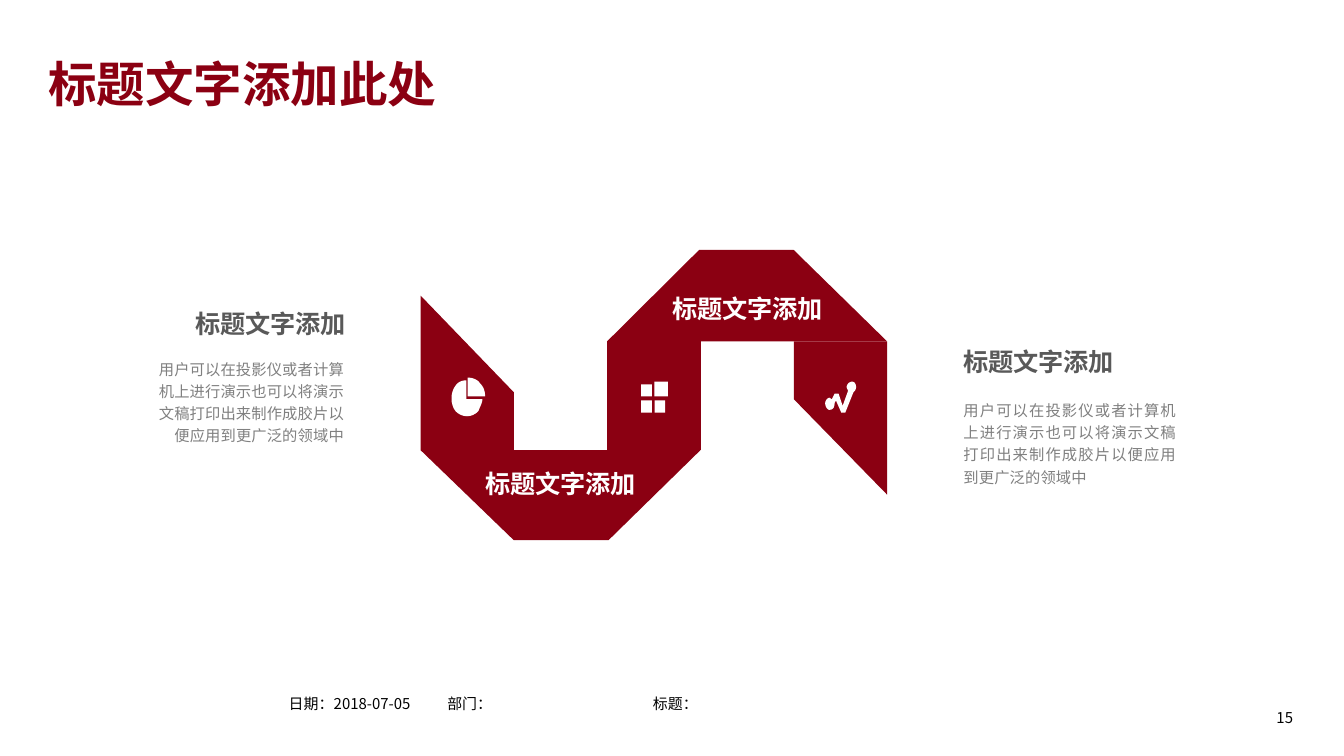
import dataclasses

import lxml.etree
import pptx
import pptx.dml.color
import pptx.enum.shapes
import pptx.enum.text
import pptx.oxml.ns
import pptx.util

Inches = pptx.util.Inches
ALIGN = pptx.enum.text.PP_ALIGN


@dataclasses.dataclass(frozen=True)
class Theme:
    font: str = "Noto Sans CJK SC"
    red: str = "8B0012"
    white: str = "FFFFFF"
    black: str = "000000"
    heading: str = "595959"
    body: str = "808080"
    title_size: float = 26
    heading_size: float = 13.5
    body_size: float = 8.25
    footer_size: float = 8


THEME = Theme()
LABEL = "标题文字添加"
BODY = "用户可以在投影仪或者计算机上进行演示也可以将演示文稿打印出来制作成胶片以便应用到更广泛的领域中"


def add_text(page, text, box, *, size, color, bold=False, align=ALIGN.LEFT, spacing=1.0):
    frame = page.shapes.add_textbox(*map(Inches, box)).text_frame
    frame.word_wrap = True
    para = frame.paragraphs[0]
    para.alignment = align
    para.line_spacing = spacing
    span = para.add_run()
    span.text = text
    span.font.name = THEME.font
    span.font.size = pptx.util.Pt(size)
    span.font.bold = bold
    span.font.color.rgb = pptx.dml.color.RGBColor.from_string(color)
    east_asian = lxml.etree.SubElement(span.font._element, pptx.oxml.ns.qn("a:ea"))
    east_asian.set("typeface", THEME.font)


def paint(shape, color):
    shape.shadow.inherit = False
    shape.fill.solid()
    shape.fill.fore_color.rgb = pptx.dml.color.RGBColor.from_string(color)
    shape.line.fill.background()


def curve_points(start, curve, steps=8):
    """Sample a cubic curve given as two control points and an end point."""
    x0, y0 = start
    x1, y1, x2, y2, x3, y3 = curve
    for step in range(1, steps + 1):
        t = step / steps
        u = 1 - t
        a, b, c, d = u**3, 3 * u * u * t, 3 * u * t * t, t**3
        yield a * x0 + b * x1 + c * x2 + d * x3, a * y0 + b * y1 + c * y2 + d * y3


def add_outline(page, origin, segments, color):
    """Draw a closed outline; a pair is a corner, six numbers are a curve."""
    points = []
    for segment in segments:
        points.extend([segment] if len(segment) == 2 else curve_points(points[-1], segment))
    left, top = origin
    corners = [(Inches(left + x), Inches(top + y)) for x, y in points]
    builder = page.shapes.build_freeform(*corners[0], scale=1.0)
    builder.add_line_segments(corners[1:], close=True)
    paint(builder.convert_to_shape(), color)


def add_pie_icon(page, origin):
    body = [(0.12, 0.02), (0.09, 0.02, 0.06, 0.03, 0.04, 0.06),
            (0, 0.11, 0, 0.2, 0.04, 0.25), (0.09, 0.3, 0.16, 0.3, 0.21, 0.25),
            (0.22, 0.22, 0.24, 0.19, 0.24, 0.16), (0.12, 0.16)]
    slice_ = [(0.22, 0.04), (0.2, 0.01, 0.16, 0, 0.13, 0), (0.13, 0.14),
              (0.26, 0.14), (0.26, 0.1, 0.25, 0.07, 0.22, 0.04)]
    for segments in (body, slice_):
        add_outline(page, origin, segments, THEME.white)


def add_tiles_icon(page, origin):
    left, top = origin
    for x, y, width, height in ((0, 0.02, 0.08, 0.09), (0.1, 0, 0.1, 0.11),
                                (0, 0.14, 0.08, 0.09), (0.1, 0.14, 0.08, 0.09)):
        box = map(Inches, (left + x, top + y, width, height))
        paint(page.shapes.add_shape(pptx.enum.shapes.MSO_SHAPE.RECTANGLE, *box), THEME.white)


def add_trend_icon(page, origin):
    segments = [(0.23, 0.04), (0.23, 0.02, 0.22, 0, 0.2, 0), (0.18, 0, 0.16, 0.02, 0.16, 0.04),
                (0.16, 0.05, 0.17, 0.06, 0.17, 0.07), (0.13, 0.18), (0.1, 0.09), (0.07, 0.09),
                (0.05, 0.13), (0.04, 0.13, 0.04, 0.12, 0.03, 0.12),
                (0.02, 0.12, 0, 0.14, 0, 0.16), (0, 0.19, 0.02, 0.21, 0.03, 0.21),
                (0.06, 0.21, 0.07, 0.19, 0.07, 0.16), (0.08, 0.14), (0.12, 0.23),
                (0.15, 0.23), (0.21, 0.08), (0.22, 0.07, 0.23, 0.06, 0.23, 0.04)]
    add_outline(page, origin, segments, THEME.white)


def add_ribbon(page, box):
    """Fold a ribbon five bands wide through the box, with icons and labels."""
    left, top, width, height = box
    x = [width * column / 5 for column in range(6)]
    upper, lower = 0.68, height - 0.67
    pieces = [
        [(x[2], upper), (x[3], upper), (x[3], lower), (x[2], lower)],
        [(x[5], upper), (x[2], upper), (x[3] - 0.01, 0), (x[4], 0)],
        [(x[4], 1.11), (x[4], upper), (x[5], upper), (x[5], 1.82)],
        [(x[0], lower), (x[3], lower), (x[2] + 0.01, height), (x[1], height)],
        [(x[1], 1.06), (x[1], lower), (x[0], lower), (x[0], 0.34)],
    ]
    for piece in pieces:
        add_outline(page, (left, top), piece, THEME.red)
    add_pie_icon(page, (left + 0.22, top + 0.95))
    add_tiles_icon(page, (left + 1.64, top + 0.98))
    add_trend_icon(page, (left + 3.01, top + 0.98))
    for label_x, label_y in ((1.62, 0.23), (0.23, 1.53)):
        add_text(page, LABEL, (left + label_x, top + label_y, 1.62, 0.37), bold=True,
                 size=THEME.heading_size, color=THEME.white, align=ALIGN.CENTER, spacing=1.2)


def add_caption(page, heading_box, body_box, align):
    add_text(page, LABEL, heading_box, size=THEME.heading_size, color=THEME.heading,
             bold=True, align=align, spacing=1.2)
    add_text(page, BODY, body_box, size=THEME.body_size, color=THEME.body,
             align=align, spacing=1.2)


def add_footer(page, top):
    for left, text in ((2.05, "日期：2018-07-05"), (3.23, "部门："), (4.76, "标题：")):
        add_text(page, text, (left, top, 1.14, 0.23), size=THEME.footer_size, color=THEME.black)
    add_text(page, "15", (9.39, top + 0.1, 0.33, 0.23), size=THEME.footer_size,
             color=THEME.black, align=ALIGN.RIGHT)


def main():
    deck = pptx.Presentation()
    deck.slide_width, deck.slide_height = Inches(10), Inches(10 * 9 / 16)
    page = deck.slides.add_slide(deck.slide_layouts[6])
    add_text(page, "标题文字添加此处", (0.26, 0.29, 3.7, 0.6), size=THEME.title_size,
             color=THEME.red, bold=True, spacing=1.14)
    add_caption(page, (0.83, 2.2, 1.84, 0.37), (0.97, 2.6, 1.69, 0.77), ALIGN.RIGHT)
    add_ribbon(page, (3.13, 1.86, 3.47, 2.16))
    add_caption(page, (7.07, 2.48, 1.84, 0.37), (7.07, 2.91, 1.78, 0.77), ALIGN.JUSTIFY)
    add_footer(page, 5.12)
    deck.save("out.pptx")


if __name__ == "__main__":
    main()
